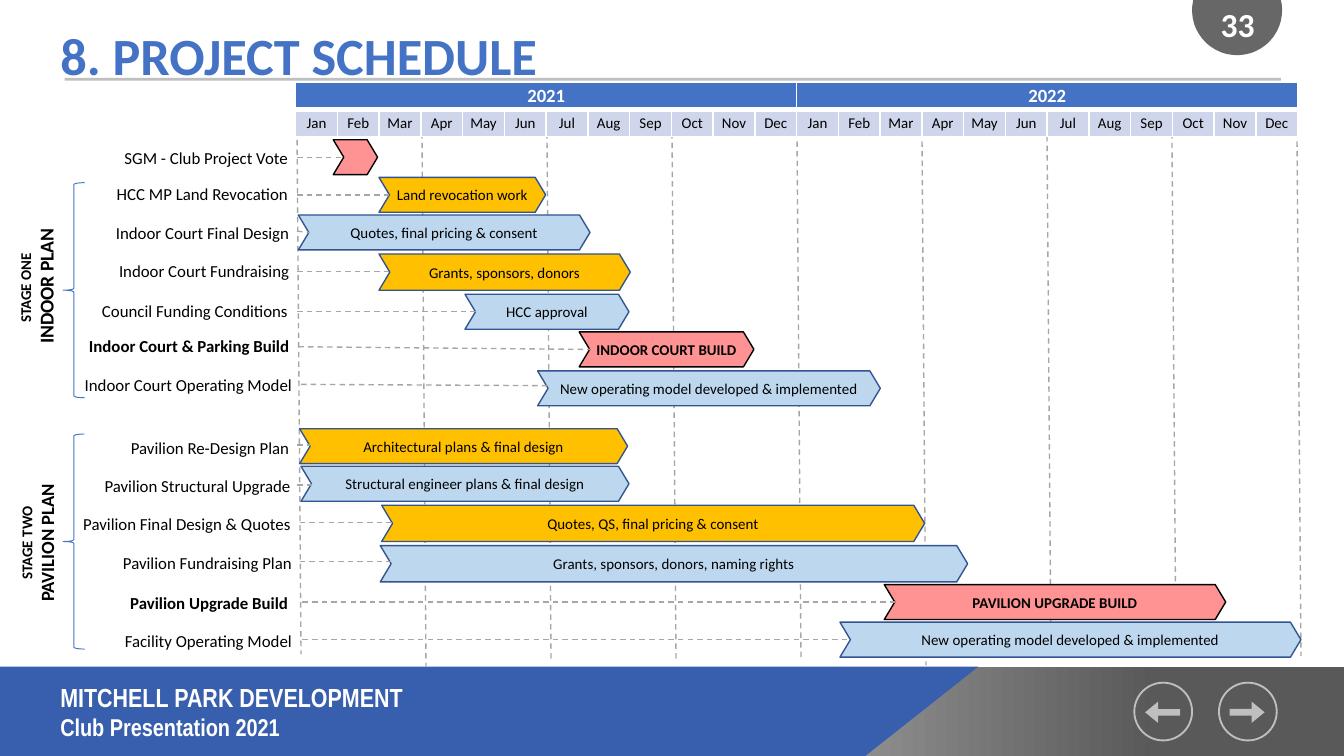
"""Build the project schedule slide: a two-year Gantt chart with stages and footer."""
from lxml import etree
from pptx import Presentation
from pptx import util as u
from pptx.dml.color import RGBColor
from pptx.enum import dml, shapes, text
from pptx.oxml.ns import qn

SHAPE, ALIGN, ANCHOR = shapes.MSO_SHAPE, text.PP_ALIGN, text.MSO_ANCHOR
YEARS = ["2021", "2022"]
MONTHS = "Jan Feb Mar Apr May Jun Jul Aug Sep Oct Nov Dec".split()
BAR_STYLES = {
    "work": ("FFC000", "325491", False),
    "plan": ("BDD7EE", "325491", False),
    "build": ("FF9393", "000000", True),
}
# task, (label left, top, right), (bar left, top, width, height), kind, bar text, (guide left, start y, end y)
TASKS = [
    ("SGM - Club Project Vote", (0.63, 1.06, 2.21), (2.48, 1.04, 0.33, 0.26), "build", "", (2.21, 1.17, 1.17)),
    ("HCC MP Land Revocation", (0.61, 1.33, 2.21), (2.82, 1.32, 1.24, 0.26), "work",
     "Land revocation work", (2.21, 1.45, 1.45)),
    ("Indoor Court Final Design", (0.62, 1.62, 2.22), (2.22, 1.6, 2.17, 0.26), "plan",
     "Quotes, final pricing & consent", (2.21, 1.72, 1.73)),
    ("Indoor Court Fundraising", (0.62, 1.9, 2.22), (2.82, 1.89, 1.87, 0.27), "work",
     "Grants, sponsors, donors", (2.21, 2.02, 2.02)),
    ("Council Funding Conditions", (0.61, 2.2, 2.21), (3.46, 2.19, 1.22, 0.26), "plan",
     "HCC approval", (2.21, 2.32, 2.32)),
    ("Indoor Court & Parking Build", (0.54, 2.46, 2.22), (4.31, 2.47, 1.3, 0.26), "build",
     "INDOOR COURT BUILD", (2.22, 2.58, 2.6)),
    ("Indoor Court Operating Model", (0.42, 2.75, 2.24), (4, 2.76, 2.55, 0.26), "plan",
     "New operating model developed & implemented", (2.24, 2.86, 2.87)),
    ("Pavilion Re-Design Plan", (0.61, 3.22, 2.22), (2.23, 3.19, 2.44, 0.26), "work",
     "Architectural plans & final design", (2.21, 3.31, 3.31)),
    ("Pavilion Structural Upgrade", (0.56, 3.5, 2.23), (2.24, 3.47, 2.44, 0.26), "plan",
     "Structural engineer plans & final design", (2.21, 3.61, 3.61)),
    ("Pavilion Final Design & Quotes", (0.52, 3.78, 2.23), (2.84, 3.76, 4.04, 0.27), "work",
     "Quotes, QS, final pricing & consent", (2.23, 3.89, 3.89)),
    ("Pavilion Fundraising Plan", (0.63, 4.07, 2.24), (2.83, 4.06, 4.37, 0.27), "plan",
     "Grants, sponsors, donors, naming rights", (2.23, 4.18, 4.18)),
    ("Pavilion Upgrade Build ", (0.63, 4.37, 2.24), (6.58, 4.35, 2.54, 0.26), "build",
     "PAVILION UPGRADE BUILD", (2.25, 4.48, 4.48)),
    ("Facility Operating Model", (0.44, 4.65, 2.24), (6.25, 4.63, 3.43, 0.26), "plan",
     "New operating model developed & implemented", (2.25, 4.76, 4.76)),
]
STAGES = [("STAGE ONE ", "INDOOR PLAN", 10.5, 1.93, 0.4, 1.36), ("STAGE TWO", "PAVILION PLAN", 10, 3.85, 0.38, 3.23)]
QUARTER_LINES = [(0.97, 4.87), (0.99, 4.96), (0.99, 4.92), (0.99, 4.92), (0.98, 4.91),
                 (0.98, 4.95), (0.94, 4.88), (0.99, 4.89), (0.98, 4.88)]
FOOTER_WEDGE = [(0, 4.96), (7.28, 4.96), (6.42, 5.64), (0, 5.64)]
NAVIGATION = [(9.07, 0), (8.44, 180)]


def colour(hex_value):
    return RGBColor.from_string(hex_value)


def apply(target, settings):
    for name, value in settings.items():
        setattr(target, name, value)


def inches(*lengths):
    return [u.Inches(length) for length in lengths]


def add_run(paragraph, words, size, hex_value="000000", bold=False, font="Calibri"):
    run = paragraph.add_run()
    run.text = words
    apply(run.font, {"size": u.Pt(size), "bold": bold, "name": font})
    run.font.color.rgb = colour(hex_value)


def set_insets(target, across, down):
    apply(target, {"margin_left": u.Inches(across), "margin_right": u.Inches(across),
                   "margin_top": u.Inches(down), "margin_bottom": u.Inches(down)})


def add_text(slide, place, align=ALIGN.LEFT, anchor=ANCHOR.TOP, insets=(0.1, 0.05)):
    box = slide.shapes.add_textbox(*inches(*place))
    apply(box.text_frame, {"word_wrap": True, "vertical_anchor": anchor})
    set_insets(box.text_frame, *insets)
    box.text_frame.paragraphs[0].alignment = align
    return box, box.text_frame.paragraphs[0]


def paint(shape, fill=None, line=None, width=0.75):
    shape.shadow.inherit = False
    if fill:
        shape.fill.solid()
        shape.fill.fore_color.rgb = colour(fill)
    else:
        shape.fill.background()
    if line:
        shape.line.color.rgb = colour(line)
        shape.line.width = u.Pt(width)
    else:
        shape.line.fill.background()


def add_shape(slide, kind, place, adjustments=(), **look):
    shape = slide.shapes.add_shape(kind, *inches(*place))
    for index, value in enumerate(adjustments):
        shape.adjustments[index] = value
    paint(shape, **look)
    return shape


def add_dash(slide, *ends):
    dash = slide.shapes.add_connector(shapes.MSO_CONNECTOR.STRAIGHT, *inches(*ends))
    dash.line.color.rgb = colour("A6A6A6")
    apply(dash.line, {"width": u.Pt(0.75), "dash_style": dml.MSO_LINE.DASH})
    etree.SubElement(dash._element.spPr, qn("a:effectLst"))


def add_footer(slide):
    band = add_shape(slide, SHAPE.RECTANGLE, (0, 4.96, 10, 0.68))
    band.fill.gradient()
    band.fill.gradient_angle = 180
    for stop, (position, shade) in zip(band.fill.gradient_stops, [(0.14, "595959"), (0.82, "FFFFFF")]):
        stop.position = position
        stop.color.rgb = colour(shade)
    start, *others = [inches(*point) for point in FOOTER_WEDGE]
    outline = slide.shapes.build_freeform(*start)
    outline.add_line_segments(others, close=True)
    paint(outline.convert_to_shape(), "385FAE")
    box, project = add_text(slide, (0.35, 5.03, 4.72, 0.53), anchor=ANCHOR.MIDDLE)
    add_run(project, "MITCHELL PARK DEVELOPMENT", 14, "FFFFFF", True, "Arial Narrow")
    add_run(box.text_frame.add_paragraph(), "Club Presentation 2021", 13, "FFFFFF", True, "Arial Narrow")
    for left, turn in NAVIGATION:
        add_shape(slide, SHAPE.OVAL, (left, 5.08, 0.43, 0.43), line="BFBFBF", width=1)
        arrow = add_shape(slide, SHAPE.RIGHT_ARROW, (left + 0.08, 5.22, 0.26, 0.16), (0.31, 0.61), fill="BFBFBF")
        arrow.rotation = turn


def add_heading(slide):
    badge = add_shape(slide, SHAPE.CHORD, (8.87, -0.26, 0.67, 0.67), (37.94, 162), fill="4D4D4D")
    badge.rotation = 283.2
    shade = badge._element.spPr.find(qn("a:solidFill"))[0]
    etree.SubElement(shade, qn("a:alpha"), val="85000")
    number = add_text(slide, (8.93, -0.02, 0.56, 0.4), ALIGN.CENTER, ANCHOR.MIDDLE)[1]
    add_run(number, "33", 18, "FFFFFF", True)
    add_shape(slide, SHAPE.RECTANGLE, (0.48, 0.58, 9.05, 0.02), fill="BFBFBF")
    title = slide.shapes.title
    apply(title, dict(zip(("left", "top", "width", "height"), inches(0.35, 0.13, 8.28, 0.55))))
    apply(title.text_frame, {"vertical_anchor": ANCHOR.MIDDLE, "auto_size": text.MSO_AUTO_SIZE.NONE})
    heading = title.text_frame.paragraphs[0]
    apply(heading, {"alignment": ALIGN.LEFT, "space_before": u.Pt(7.5)})
    add_run(heading, "8. PROJECT SCHEDULE", 28, "4472C4", True)


def style_cell(cell, fill, bottom):
    cell.fill.solid()
    cell.fill.fore_color.rgb = colour(fill)
    cell.vertical_anchor = ANCHOR.MIDDLE
    set_insets(cell, 0.02, 0.02)
    properties = cell._tc.get_or_add_tcPr()
    for index, (side, width) in enumerate([("L", 1), ("R", 1), ("T", 1), ("B", bottom)]):
        border = etree.Element(qn(f"a:ln{side}"), w=str(u.Pt(width)))
        solid = etree.SubElement(border, qn("a:solidFill"))
        etree.SubElement(solid, qn("a:srgbClr"), val="FFFFFF")
        properties.insert(index, border)


def add_calendar(slide):
    count = len(YEARS) * len(MONTHS)
    calendar = slide.shapes.add_table(2, count, *inches(2.2, 0.61, 7.46, 0.4)).table
    for column in calendar.columns:
        column.width = u.Inches(7.46 / count)
    for index in range(count):
        year, month = calendar.cell(0, index), calendar.cell(1, index)
        style_cell(year, "4472C4", 3)
        style_cell(month, "CFD5EA", 1)
        add_run(month.text_frame.paragraphs[0], MONTHS[index % 12], 8)
        month.text_frame.paragraphs[0].alignment = ALIGN.CENTER
    for index, name in enumerate(YEARS):
        first = calendar.cell(0, index * 12)
        first.merge(calendar.cell(0, index * 12 + 11))
        add_run(first.text_frame.paragraphs[0], name, 10, "FFFFFF", True)
        first.text_frame.paragraphs[0].alignment = ALIGN.CENTER


def add_task(slide, task, label, bar, kind, words, guide):
    fill, line, bold = BAR_STYLES[kind]
    left, top, right = label
    name = add_text(slide, (left, top, right - left, 0.23), ALIGN.RIGHT, insets=(0.07, 0.04))[1]
    add_run(name, task, 9, bold=bold and bool(words))
    chevron = add_shape(slide, SHAPE.CHEVRON, bar, (0.3,), fill=fill, line=line)
    if words:
        set_insets(chevron.text_frame, 0, 0)
        chevron.text_frame.vertical_anchor = ANCHOR.MIDDLE
        chevron.text_frame.paragraphs[0].alignment = ALIGN.CENTER
        add_run(chevron.text_frame.paragraphs[0], words, 8, bold=bold)
    start, start_y, end_y = guide
    add_dash(slide, start, start_y, bar[0] + 0.08, end_y)


def add_stage(slide, stage, plan, size, top, height, brace_top):
    add_shape(slide, SHAPE.LEFT_BRACE, (0.47, brace_top, 0.16, 1.6), line="4472C4", width=0.5)
    box, caption = add_text(slide, (-0.51, top, 1.58, height), ALIGN.CENTER, insets=(0.07, 0.04))
    box.rotation = 270
    add_run(caption, stage, 8, bold=True)
    caption.add_line_break()
    add_run(caption, plan, size, bold=True)


def main():
    deck = Presentation()
    apply(deck, {"slide_width": u.Inches(10), "slide_height": u.Inches(10) * 9 // 16})
    slide = deck.slides.add_slide(deck.slide_layouts[5])
    add_footer(slide)
    add_heading(slide)
    for index, (top, bottom) in enumerate(QUARTER_LINES):
        left = 2.21 + 0.93 * index
        add_dash(slide, left, top, left + 0.03, bottom)
    add_calendar(slide)
    for task in TASKS:
        add_task(slide, *task)
    for stage in STAGES:
        add_stage(slide, *stage)
    deck.save("out.pptx")


if __name__ == "__main__":
    main()
